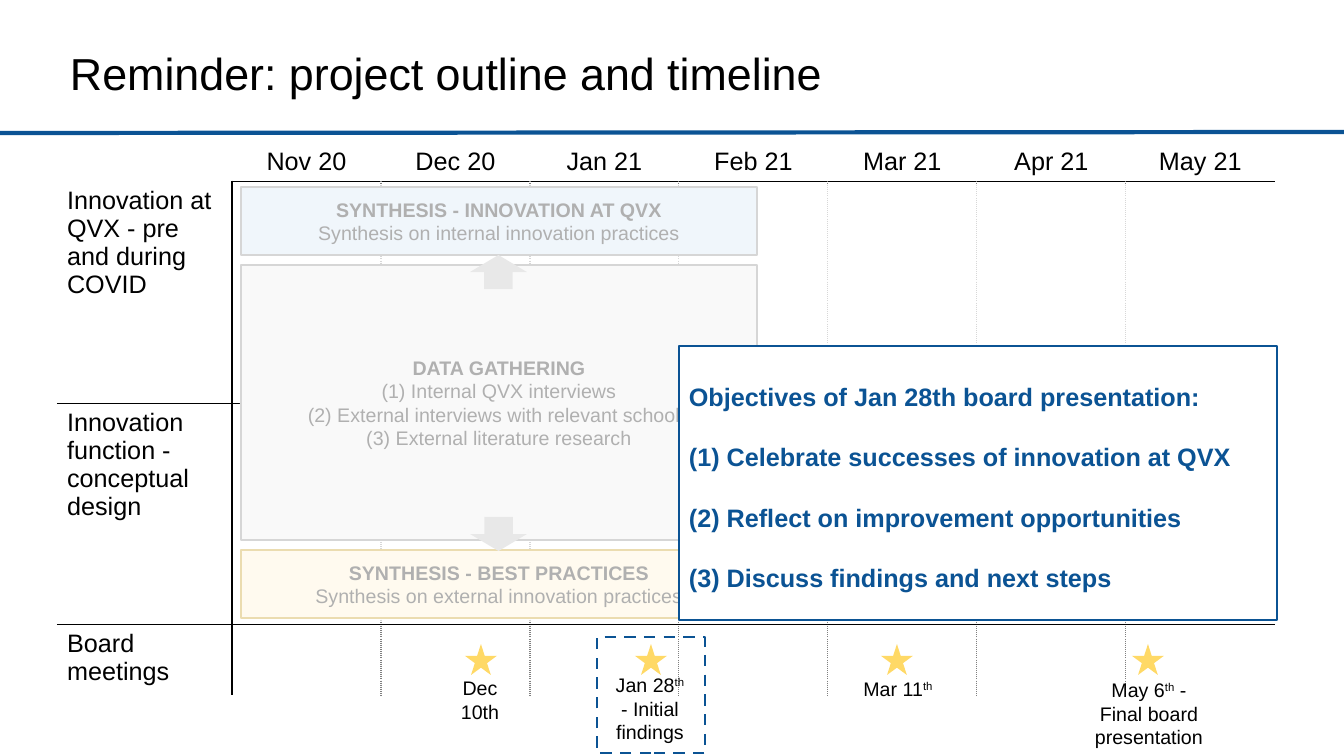
from dataclasses import dataclass

from lxml.etree import SubElement
from pptx import Presentation
from pptx.dml.color import RGBColor
from pptx.enum.dml import MSO_LINE
from pptx.enum.shapes import MSO_CONNECTOR, MSO_SHAPE
from pptx.enum.text import MSO_ANCHOR, PP_ALIGN
from pptx.oxml import parse_xml
from pptx.oxml.ns import nsdecls, qn
from pptx.util import Pt

PX = 914400 / 100.8


@dataclass(frozen=True)
class Theme:
    font: str = "Arial"
    title: int = 32
    body: int = 18
    small: int = 14
    black: str = "000000"
    white: str = "FFFFFF"
    blue: str = "0B5394"
    star: str = "FFD966"
    arrow: str = "B7B7B7"
    dots: str = "7F7F7F"
    grey_line: str = "7B7B7B"
    grey_fill: str = "EDEDED"
    gold_line: str = "BF9000"
    gold_fill: str = "FFF2CC"
    sky_fill: str = "CFE2F3"


theme = Theme()
deck = Presentation()
deck.slide_width, deck.slide_height = round(1344 * PX), round(756 * PX)
slide = deck.slides.add_slide(deck.slide_layouts[6])
shapes = slide.shapes


def add_block(kind, place, fill=None, line=None, weight=1):
    """Add a preset shape, or a text box when kind is None, at a place in px."""
    place = [round(n * PX) for n in place]
    if kind is None:
        return shapes.add_textbox(*place)
    block = shapes.add_shape(kind, *place)
    block.shadow.inherit = False
    if fill:
        block.fill.solid()
        block.fill.fore_color.rgb = RGBColor.from_string(fill)
    else:
        block.fill.background()
    if line:
        block.line.color.rgb = RGBColor.from_string(line)
        block.line.width = Pt(weight)
    else:
        block.line.fill.background()
    return block


def write(frame, paragraphs, size, align=PP_ALIGN.LEFT, color=theme.black,
          bold=(), spacing=None):
    """Fill a text frame; bold holds the numbers of the bold paragraphs."""
    frame.word_wrap = True
    for i, text in enumerate(paragraphs):
        paragraph = frame.paragraphs[0] if i == 0 else frame.add_paragraph()
        paragraph.text = text
        paragraph.alignment = align
        paragraph.line_spacing = spacing
        paragraph.font.name = theme.font
        paragraph.font.size = Pt(size)
        paragraph.font.bold = i in bold
        paragraph.font.color.rgb = RGBColor.from_string(color)


# Timeline grid
months = ["Nov 20", "Dec 20", "Jan 21", "Feb 21", "Mar 21", "Apr 21", "May 21"]
tracks = ["", "Innovation at QVX - pre and during COVID",
          "Innovation function - conceptual design", "Board meetings"]
column_widths = [175] + [149] * len(months)
row_heights = [38, 222, 221, 71]
timeline = shapes.add_table(
    len(row_heights), len(column_widths), round(57 * PX), round(143 * PX),
    round(sum(column_widths) * PX), round(sum(row_heights) * PX)).table
timeline.first_row = timeline.horz_banding = False
for column, width in zip(timeline.columns, column_widths):
    column.width = round(width * PX)
for row, height in zip(timeline.rows, row_heights):
    row.height = round(height * PX)

last_row, last_column = len(tracks) - 1, len(months)
for r in range(last_row + 1):
    for c in range(last_column + 1):
        cell = timeline.cell(r, c)
        cell.fill.background()
        if c == 0:
            write(cell.text_frame, [tracks[r]], theme.body)
        elif r == 0:
            write(cell.text_frame, [months[c - 1]], theme.body, PP_ALIGN.CENTER)
        edges = {
            "L": r > 0 and c > 0 and ("solid" if c == 1 else "dot"),
            "R": r > 0 and c < last_column and ("solid" if c == 0 else "dot"),
            "T": r > 0 and r + c > 1 and "solid",
            "B": r < last_row and r + c > 0 and "solid",
        }
        for position, (side, dash) in enumerate(edges.items()):
            color = theme.dots if dash == "dot" else theme.black
            paint = (f'<a:solidFill><a:srgbClr val="{color}"/></a:solidFill>'
                     f'<a:prstDash val="{dash}"/>') if dash else "<a:noFill/>"
            cell._tc.get_or_add_tcPr().insert(position, parse_xml(
                f'<a:ln{side} {nsdecls("a")} w="{Pt(1)}">{paint}</a:ln{side}>'))

title = add_block(None, (60, 39, 1159, 74))
title.text_frame.vertical_anchor = MSO_ANCHOR.MIDDLE
write(title.text_frame, ["Reminder: project outline and timeline"], theme.title,
      spacing=0.9)

# Board meetings: star left, date place, day, ordinal, remark
meetings = [
    (465, (431, 671, 98, 34), "Dec 10th", "", ""),
    (635, (601, 668, 98, 82), "Jan 28", "th", " - Initial findings"),
    (881, (842, 672, 112, 82), "Mar 11", "th", ""),
    (1132, (1084, 673, 130, 82), "May 6", "th", " - Final board presentation"),
]
for star_left, place, day, ordinal, remark in meetings:
    add_block(MSO_SHAPE.STAR_5_POINT, (star_left, 644, 32, 31), theme.star)
    date = add_block(None, place).text_frame
    write(date, [day], theme.small, PP_ALIGN.CENTER)
    if ordinal:
        raised = date.paragraphs[0].add_run()
        raised.text = ordinal
        raised._r.get_or_add_rPr().set("baseline", "30000")
    if remark:
        date.paragraphs[0].add_run().text = remark

# Work packages
packages = [
    (265, 275, theme.grey_fill, theme.grey_line, "DATA GATHERING",
     "(1) Internal QVX interviews\n"
     "(2) External interviews with relevant schools\n"
     "(3) External literature research"),
    (550, 68, theme.gold_fill, theme.gold_line, "SYNTHESIS - BEST PRACTICES",
     "Synthesis on external innovation practices"),
    (187, 68, theme.sky_fill, theme.grey_line, "SYNTHESIS - INNOVATION AT QVX",
     "Synthesis on internal innovation practices"),
]
for top, height, fill, line, heading, details in packages:
    package = add_block(MSO_SHAPE.RECTANGLE, (241, top, 516, height), fill, line)
    package.text_frame.vertical_anchor = MSO_ANCHOR.MIDDLE
    write(package.text_frame, [heading, details], theme.small, PP_ALIGN.CENTER,
          bold=[0])

for top, rotation in [(255, 0), (517, 180)]:
    arrow = add_block(MSO_SHAPE.UP_ARROW, (470, top, 57, 34), theme.arrow)
    arrow.rotation = rotation

rule = shapes.add_connector(MSO_CONNECTOR.STRAIGHT, 0, round(133 * PX),
                            round(1344 * PX), round(132 * PX))
rule.line.color.rgb = RGBColor.from_string(theme.blue)
rule.line.width = Pt(3)
SubElement(rule._element.spPr, qn("a:effectLst"))

next_meeting = add_block(MSO_SHAPE.RECTANGLE, (597, 637, 108, 116),
                         line=theme.blue, weight=2)
next_meeting.line.dash_style = MSO_LINE.DASH

# Translucent veil over the finished work, then the objectives on top
veil = add_block(MSO_SHAPE.RECTANGLE, (240, 185, 1045, 436), theme.white)
veil_color = veil._element.spPr.find(qn("a:solidFill")).find(qn("a:srgbClr"))
SubElement(veil_color, qn("a:alpha"), val="69000")

objectives = add_block(MSO_SHAPE.RECTANGLE, (679, 346, 598, 274), theme.white,
                       theme.blue, 2)
objectives.text_frame.vertical_anchor = MSO_ANCHOR.TOP
write(objectives.text_frame,
      ["Objectives of Jan 28th board presentation:\n"
       "(1) Celebrate successes of innovation at QVX",
       "(2) Reflect on improvement opportunities",
       "(3) Discuss findings and next steps"],
      theme.body, color=theme.blue, bold=range(3), spacing=2.0)

deck.save("out.pptx")
